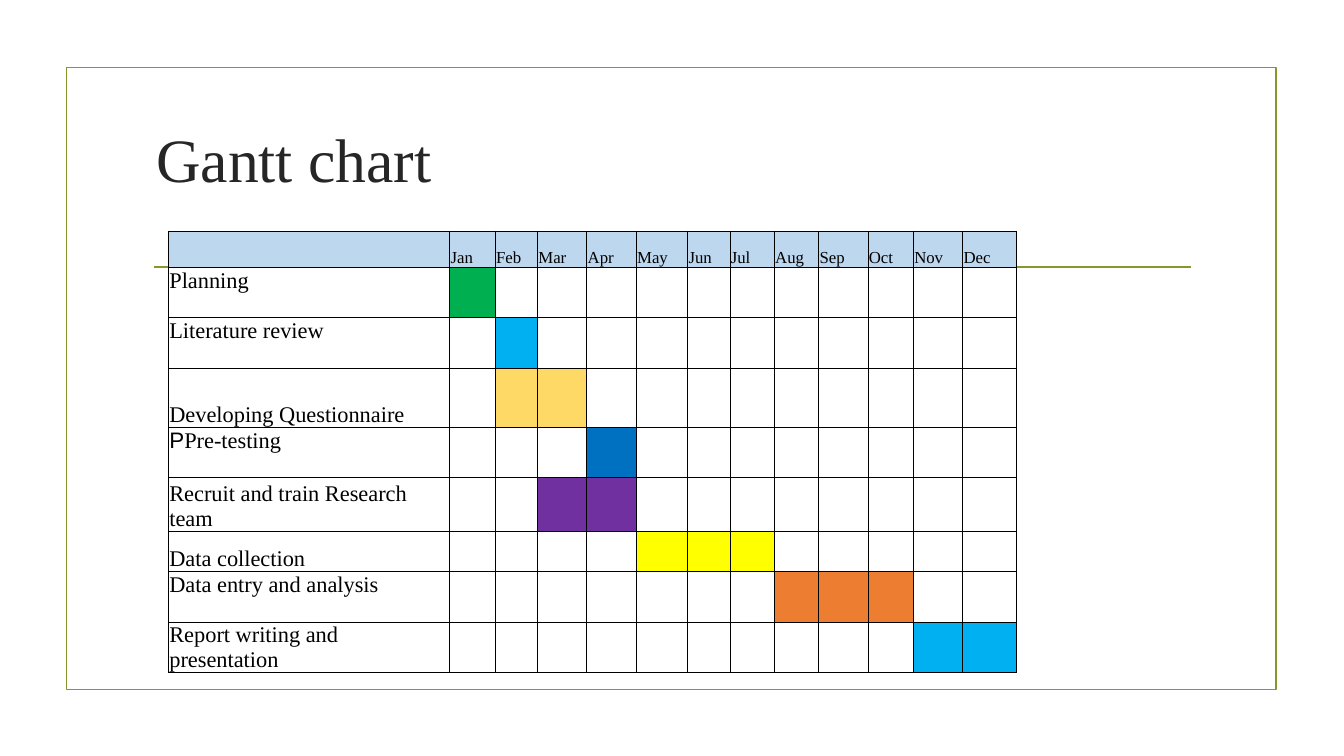
from lxml import etree
from pptx import Presentation
from pptx.dml.color import RGBColor
from pptx.enum.shapes import MSO_CONNECTOR, MSO_SHAPE
from pptx.enum.text import MSO_ANCHOR, PP_ALIGN
from pptx.oxml.ns import qn
from pptx.util import Inches, Pt

TOP, MIDDLE, BOTTOM = MSO_ANCHOR.TOP, MSO_ANCHOR.MIDDLE, MSO_ANCHOR.BOTTOM
LEFT = PP_ALIGN.LEFT
RECTANGLE, STRAIGHT = MSO_SHAPE.RECTANGLE, MSO_CONNECTOR.STRAIGHT

TITLE = "Gantt chart"
MONTHS = ["Jan", "Feb", "Mar", "Apr", "May", "Jun",
          "Jul", "Aug", "Sep", "Oct", "Nov", "Dec"]
# task, first month, last month, bar colour, text anchor, bullet, row height
TASKS = [
    ("Planning", "Jan", "Jan", "00B050", TOP, None, 0.5),
    ("Literature review", "Feb", "Feb", "00B0F0", TOP, None, 0.5),
    ("Developing Questionnaire", "Feb", "Mar", "FFD966", BOTTOM, None, 0.59),
    ("Pre-testing", "Apr", "Apr", "0070C0", TOP, "P", 0.5),
    ("Recruit and train Research team", "Mar", "Apr", "7030A0", BOTTOM, None, 0.53),
    ("Data collection", "May", "Jul", "FFFF00", BOTTOM, None, 0.4),
    ("Data entry and analysis", "Aug", "Oct", "ED7D31", TOP, None, 0.5),
    ("Report writing and presentation", "Nov", "Dec", "00B0F0", BOTTOM, None, 0.5),
]
COLUMN_WIDTHS = [2.79, 0.45, 0.42, 0.49, 0.49, 0.51, 0.42,
                 0.44, 0.44, 0.49, 0.45, 0.49, 0.53]
HEADER_HEIGHT = 0.36
TABLE_LEFT, TABLE_TOP = 1.67, 2.29
FONT, BLACK, GREEN, HEADER_FILL = "Times New Roman", "000000", "83992A", "BDD7EE"


def rgb(value):
    return RGBColor.from_string(value)


def format_font(font, size, color):
    font.name = FONT
    font.size = Pt(size)
    font.color.rgb = rgb(color)


def style_line(line):
    line.color.rgb = rgb(GREEN)
    line.width = Pt(1.25)


def add_borders(cell):
    properties = cell._tc.get_or_add_tcPr()
    for position, side in enumerate(("a:lnL", "a:lnR", "a:lnT", "a:lnB")):
        border = etree.Element(qn(side), w=str(Pt(0.5)))
        fill = etree.SubElement(border, qn("a:solidFill"))
        etree.SubElement(fill, qn("a:srgbClr"), val=BLACK)
        properties.insert(position, border)


def add_bullet(paragraph, character):
    properties = paragraph._p.get_or_add_pPr()
    properties.set("marL", "0")
    properties.set("indent", "0")
    color = etree.SubElement(properties, qn("a:buClr"))
    etree.SubElement(color, qn("a:srgbClr"), val=BLACK)
    etree.SubElement(properties, qn("a:buFont"), typeface="Arial")
    etree.SubElement(properties, qn("a:buChar"), char=character)


def fill_cell(cell, text="", size=12, color=None, anchor=BOTTOM, bullet=None):
    cell.margin_left = cell.margin_right = cell.margin_top = Inches(0.01)
    cell.margin_bottom = 0
    cell.vertical_anchor = anchor
    if color:
        cell.fill.solid()
        cell.fill.fore_color.rgb = rgb(color)
    else:
        cell.fill.background()
    add_borders(cell)
    paragraph = cell.text_frame.paragraphs[0]
    paragraph.text = text
    if bullet:
        add_bullet(paragraph, bullet)
    format_font(paragraph.font, size, BLACK)
    for run in paragraph.runs:
        format_font(run.font, size, BLACK)


def add_frame(slide):
    frame = slide.shapes.add_shape(
        RECTANGLE, Inches(0.66), Inches(0.67), Inches(12), Inches(6.17))
    frame.shadow.inherit = False
    frame.fill.background()
    style_line(frame.line)
    rule_y = Inches(TABLE_TOP + HEADER_HEIGHT)
    rule = slide.shapes.add_connector(
        STRAIGHT, Inches(1.53), rule_y, Inches(11.81), rule_y)
    style_line(rule.line)
    etree.SubElement(rule._element.spPr, qn("a:effectLst"))


def add_title(slide):
    title = slide.shapes.title
    title.left, title.top = Inches(1.45), Inches(1.07)
    title.width, title.height = Inches(10.46), Inches(0.99)
    title.text_frame.text = TITLE
    title.text_frame.vertical_anchor = MIDDLE
    paragraph = title.text_frame.paragraphs[0]
    paragraph.alignment = LEFT
    format_font(paragraph.runs[0].font, 44, "262626")


def add_schedule(slide):
    row_heights = [HEADER_HEIGHT] + [task[-1] for task in TASKS]
    table = slide.shapes.add_table(
        len(row_heights), len(COLUMN_WIDTHS), Inches(TABLE_LEFT), Inches(TABLE_TOP),
        Inches(sum(COLUMN_WIDTHS)), Inches(sum(row_heights))).table
    table.first_row = table.horz_banding = False
    for column, width in zip(table.columns, COLUMN_WIDTHS):
        column.width = Inches(width)
    for row, height in zip(table.rows, row_heights):
        row.height = Inches(height)

    for column, month in enumerate([""] + MONTHS):
        fill_cell(table.cell(0, column), month, color=HEADER_FILL)
    for row, (task, first, last, color, anchor, bullet, _) in enumerate(TASKS, 1):
        fill_cell(table.cell(row, 0), task, 16, anchor=anchor, bullet=bullet)
        start, end = MONTHS.index(first), MONTHS.index(last)
        for month in range(len(MONTHS)):
            active = start <= month <= end
            fill_cell(table.cell(row, month + 1), color=color if active else None)


def main():
    presentation = Presentation()
    presentation.slide_width = Inches(13.33)
    presentation.slide_height = Inches(7.5)
    slide = presentation.slides.add_slide(presentation.slide_layouts[5])
    add_frame(slide)
    add_title(slide)
    add_schedule(slide)
    presentation.save("out.pptx")


if __name__ == "__main__":
    main()
